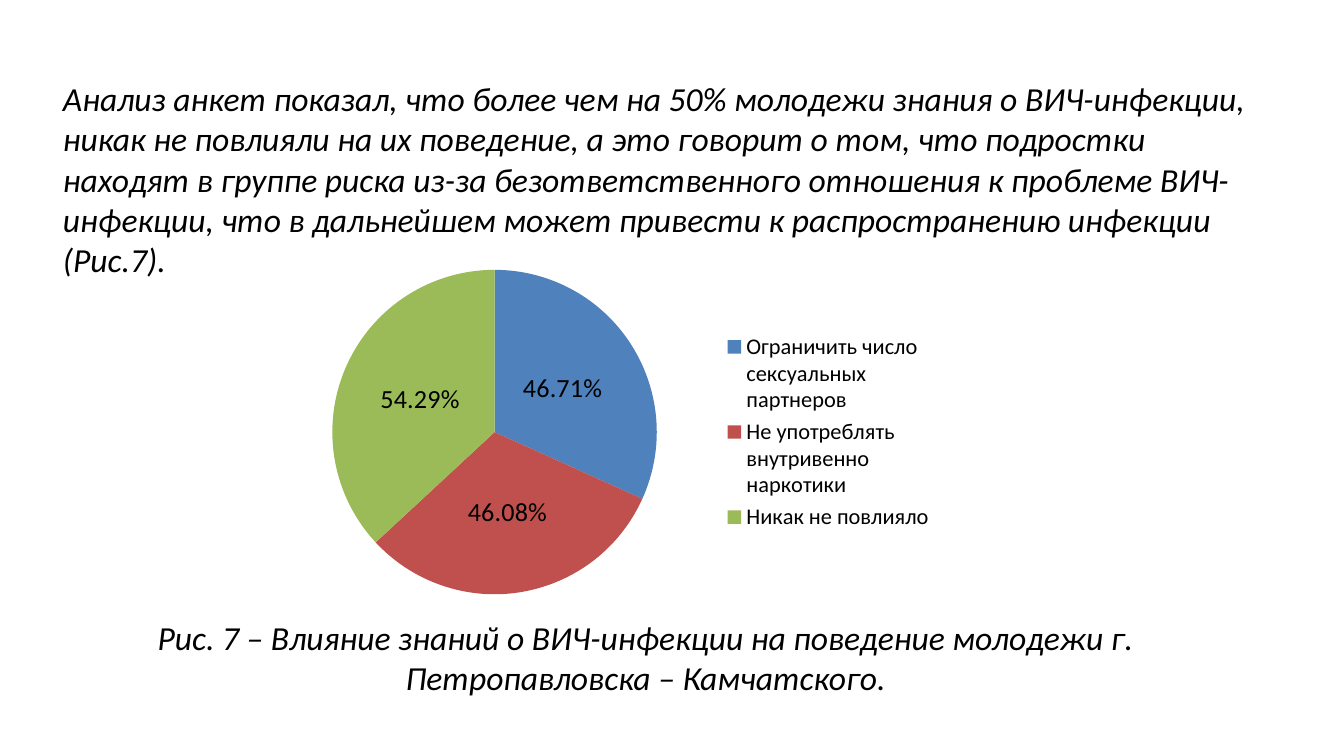
from dataclasses import dataclass

from pptx import Presentation
from pptx import util as u
from pptx.chart.data import CategoryChartData
from pptx.dml.color import RGBColor
from pptx.enum import chart as charts
from pptx.enum import text

FONT = "Calibri"
COLORS = {"ink": "000000", "blue": "4F81BD", "red": "C0504D", "green": "9BBB59"}


@dataclass
class Passage:
    left: float
    top: float
    width: float
    height: float
    wording: str
    align: text.PP_ALIGN


@dataclass
class Slice:
    label: str
    share: float
    color: str


PASSAGES = [
    Passage(
        0.37, 0.53, 9.13, 1.62,
        "Анализ анкет показал, что более чем на 50% молодежи знания о ВИЧ-инфекции, "
        "никак не повлияли на их поведение, а это говорит о том, что подростки находят "
        "в группе риска из-за безответственного отношения к проблеме ВИЧ-инфекции, что "
        "в дальнейшем может привести к распространению инфекции (Рис.7).",
        text.PP_ALIGN.LEFT,
    ),
    Passage(
        0.59, 4.54, 8.43, 0.71,
        "Рис. 7 – Влияние знаний о ВИЧ-инфекции на поведение молодежи "
        "г. Петропавловска – Камчатского.",
        text.PP_ALIGN.CENTER,
    ),
]

SLICES = [
    Slice("Ограничить число сексуальных партнеров", 0.4671, "blue"),
    Slice("Не употреблять внутривенно наркотики", 0.4608, "red"),
    Slice("Никак не повлияло", 0.5429, "green"),
]


def style_font(font, size: float, italic: bool = False) -> None:
    font.name = FONT
    font.size = u.Pt(size)
    font.italic = italic
    font.color.rgb = RGBColor.from_string(COLORS["ink"])


def add_passage(page, passage: Passage) -> None:
    box = page.shapes.add_textbox(
        u.Inches(passage.left), u.Inches(passage.top),
        u.Inches(passage.width), u.Inches(passage.height),
    )
    frame = box.text_frame
    frame.word_wrap = True
    frame.auto_size = text.MSO_AUTO_SIZE.SHAPE_TO_FIT_TEXT
    frame.text = passage.wording
    para = frame.paragraphs[0]
    para.alignment = passage.align
    style_font(para.runs[0].font, 18, italic=True)


def add_pie(page, slices: list[Slice]) -> None:
    data = CategoryChartData(number_format="0.00%")
    data.categories = [item.label for item in slices]
    data.add_series("Series 1", [item.share for item in slices])
    chart = page.shapes.add_chart(
        charts.XL_CHART_TYPE.PIE,
        u.Inches(2), u.Inches(1.87), u.Inches(5.05), u.Inches(2.69), data,
    ).chart
    chart.has_title = False
    style_font(chart.font, 10)

    chart.has_legend = True
    chart.legend.position = charts.XL_LEGEND_POSITION.RIGHT
    chart.legend.include_in_layout = False
    style_font(chart.legend.font, 12)

    plot = chart.plots[0]
    plot.vary_by_categories = True
    series = plot.series[0]
    for index, item in enumerate(slices):
        fill = series.points[index].format.fill
        fill.solid()
        fill.fore_color.rgb = RGBColor.from_string(COLORS[item.color])

    labels = series.data_labels
    labels.show_value = True
    labels.show_percentage = False
    labels.number_format = "0.00%"
    labels.number_format_is_linked = False
    labels.position = charts.XL_LABEL_POSITION.CENTER
    style_font(labels.font, 14)


def main() -> None:
    deck = Presentation()
    deck.slide_width = u.Inches(10)
    deck.slide_height = u.Inches(10 * 9 / 16)
    page = deck.slides.add_slide(deck.slide_layouts[6])
    introduction, caption = PASSAGES
    add_passage(page, introduction)
    add_pie(page, SLICES)
    add_passage(page, caption)
    deck.save("out.pptx")


if __name__ == "__main__":
    main()
